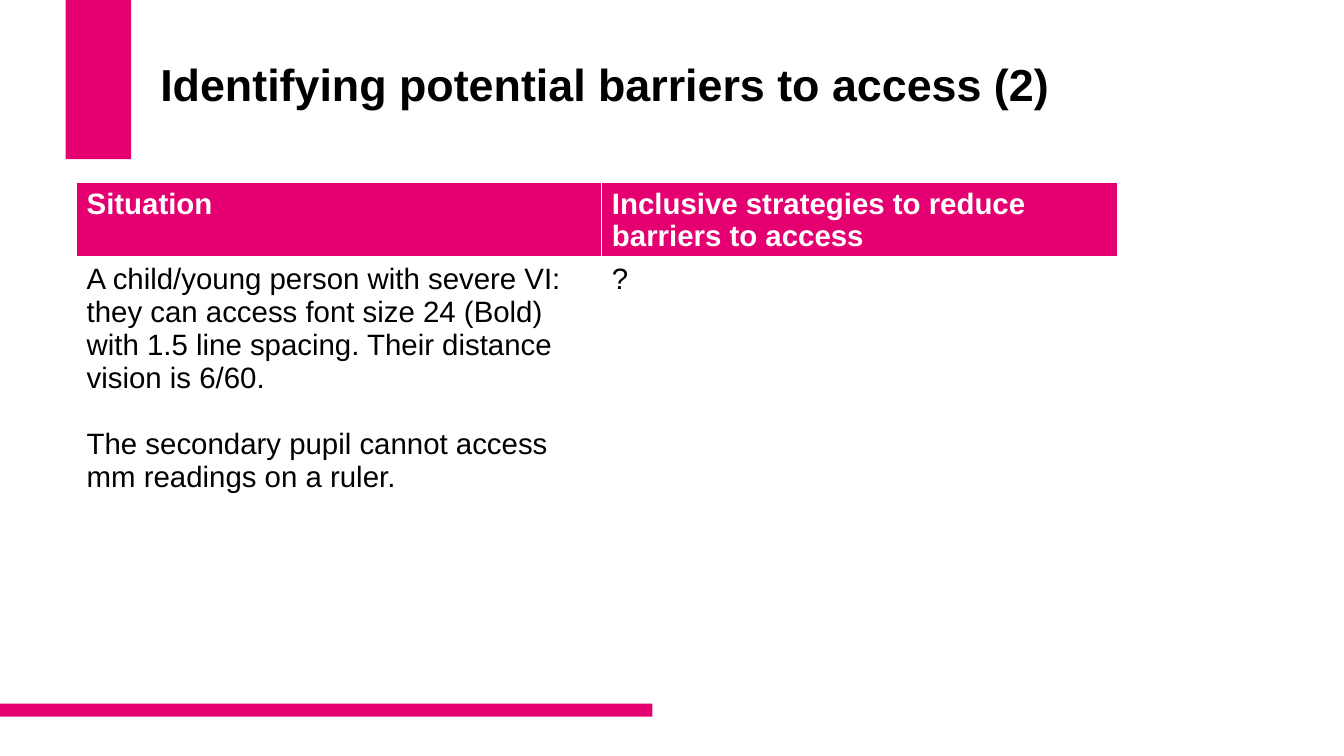
from dataclasses import dataclass

from lxml import etree
from pptx import Presentation
from pptx.dml.color import RGBColor
from pptx.enum.shapes import MSO_SHAPE
from pptx.enum.text import MSO_ANCHOR, PP_ALIGN
from pptx.oxml.ns import qn
from pptx.util import Pt

RECT = MSO_SHAPE.RECTANGLE
MIDDLE = MSO_ANCHOR.MIDDLE
LEFT = PP_ALIGN.LEFT
EMU_PER_PX = 9144
EMU_PER_PT = 12700


@dataclass(frozen=True)
class Theme:
    font: str = "Arial"
    accent: str = "E50071"
    text: str = "000000"
    paper: str = "FFFFFF"
    title_size: int = 32
    table_size: int = 21
    paragraph_gap: int = 24
    rule: int = 1
    header_rule: int = 3


THEME = Theme()
BARS = [(65, 0, 65, 158), (0, 698, 647, 13)]
COLUMNS = [521, 512]
ROWS = [74, 290, 54]
CELLS = [
    [["Situation"], ["Inclusive strategies to reduce barriers to access"]],
    [
        [
            "A child/young person with severe VI: they can access font size 24 (Bold) "
            "with 1.5 line spacing. Their distance vision is 6/60.",
            "The secondary pupil cannot access",
            "mm readings on a ruler.",
        ],
        ["?"],
    ],
    [[], []],
]


def px(n):
    return n * EMU_PER_PX


def rgb(color):
    return RGBColor.from_string(color)


def style(p, size, color, bold):
    p.alignment = LEFT
    for r in p.runs:
        r.font.name = THEME.font
        r.font.size = Pt(size)
        r.font.bold = bold
        r.font.color.rgb = rgb(color)


def add_bar(s, box):
    sp = s.shapes.add_shape(RECT, *map(px, box))
    sp.shadow.inherit = False
    sp.fill.solid()
    sp.fill.fore_color.rgb = rgb(THEME.accent)
    sp.line.fill.background()


def set_title(s, text):
    sp = s.shapes.title
    sp.left, sp.top, sp.width, sp.height = map(px, (149, 40, 960, 145))
    tf = sp.text_frame
    tf.text = text
    tf.word_wrap = True
    tf.vertical_anchor = MIDDLE
    tf.margin_bottom = px(58)
    p = tf.paragraphs[0]
    p.line_spacing = 0.9
    style(p, THEME.title_size, THEME.text, True)


def set_border(cell, side, width):
    tcPr = cell._tc.get_or_add_tcPr()
    ln = etree.SubElement(tcPr, qn(f"a:ln{side}"), w=str(width * EMU_PER_PT))
    fill = etree.SubElement(ln, qn("a:solidFill"))
    etree.SubElement(fill, qn("a:srgbClr"), val=THEME.paper)


def fill_cell(cell, lines, row):
    header = row == 0
    top = THEME.header_rule if row == 1 else THEME.rule
    bottom = THEME.header_rule if header else THEME.rule
    for side, width in zip("LRTB", (THEME.rule, THEME.rule, top, bottom)):
        set_border(cell, side, width)
    cell.fill.solid()
    cell.fill.fore_color.rgb = rgb(THEME.accent if header else THEME.paper)
    cell.margin_left = cell.margin_right = px(10)
    cell.margin_top = cell.margin_bottom = px(5)
    tf = cell.text_frame
    tf.text = "\n".join(lines)
    for i, p in enumerate(tf.paragraphs):
        if i == 1:
            p.space_before = Pt(THEME.paragraph_gap)
        style(p, THEME.table_size, THEME.paper if header else THEME.text, header)


def add_situation_table(s):
    box = map(px, (76, 181, sum(COLUMNS), sum(ROWS)))
    table = s.shapes.add_table(len(ROWS), len(COLUMNS), *box).table
    for column, width in zip(table.columns, COLUMNS):
        column.width = px(width)
    for row, height in enumerate(ROWS):
        table.rows[row].height = px(height)
        for col, lines in enumerate(CELLS[row]):
            fill_cell(table.cell(row, col), lines, row)


def main():
    prs = Presentation()
    prs.slide_width, prs.slide_height = px(1333), px(750)
    s = prs.slides.add_slide(prs.slide_layouts[5])
    for box in BARS:
        add_bar(s, box)
    set_title(s, "Identifying potential barriers to access (2)")
    add_situation_table(s)
    prs.save("out.pptx")


if __name__ == "__main__":
    main()
